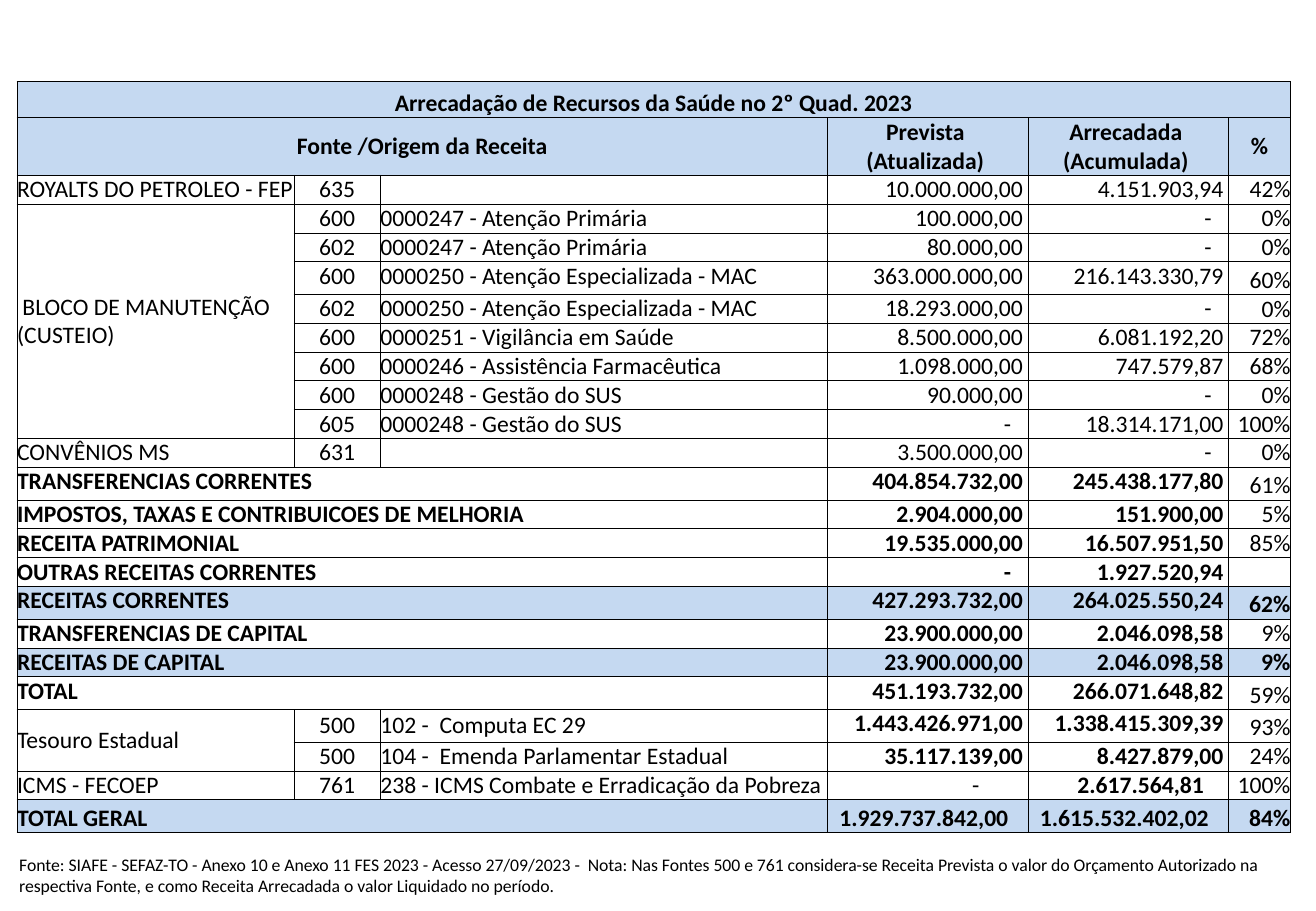
from lxml.etree import SubElement
from pptx import Presentation
from pptx.dml.color import RGBColor
from pptx.enum.text import MSO_ANCHOR, PP_ALIGN
from pptx.oxml.ns import qn
from pptx.util import Inches, Pt

BLACK = RGBColor(0x00, 0x00, 0x00)
WHITE = RGBColor(0xFF, 0xFF, 0xFF)
LIGHT_BLUE = RGBColor(0xC5, 0xD9, 0xF1)
FONT = "Calibri"
TOP, MIDDLE, BOTTOM = MSO_ANCHOR.TOP, MSO_ANCHOR.MIDDLE, MSO_ANCHOR.BOTTOM
LEFT, CENTER, RIGHT = PP_ALIGN.LEFT, PP_ALIGN.CENTER, PP_ALIGN.RIGHT

CUSTEIO = " BLOCO DE MANUTENÇÃO\n(CUSTEIO)"
TESOURO = "Tesouro Estadual"
FECOEP = "ICMS - FECOEP"
GERAL = "TOTAL GERAL"
SHADED = ("RECEITAS CORRENTES", "RECEITAS DE CAPITAL", GERAL)

receitas = [
    ("ROYALTS DO PETROLEO - FEP", "635", "", "10.000.000,00", "4.151.903,94", "42%"),
    (CUSTEIO, "600", "0000247 - Atenção Primária", "100.000,00", "-", "0%"),
    (CUSTEIO, "602", "0000247 - Atenção Primária", "80.000,00", "-", "0%"),
    (CUSTEIO, "600", "0000250 - Atenção Especializada - MAC", "363.000.000,00", "216.143.330,79", "60%"),
    (CUSTEIO, "602", "0000250 - Atenção Especializada - MAC", "18.293.000,00", "-", "0%"),
    (CUSTEIO, "600", "0000251 - Vigilância em Saúde", "8.500.000,00", "6.081.192,20", "72%"),
    (CUSTEIO, "600", "0000246 - Assistência Farmacêutica", "1.098.000,00", "747.579,87", "68%"),
    (CUSTEIO, "600", "0000248 - Gestão do SUS", "90.000,00", "-", "0%"),
    (CUSTEIO, "605", "0000248 - Gestão do SUS", "-", "18.314.171,00", "100%"),
    ("CONVÊNIOS MS", "631", "", "3.500.000,00", "-", "0%"),
    ("TRANSFERENCIAS CORRENTES", "", "", "404.854.732,00", "245.438.177,80", "61%"),
    ("IMPOSTOS, TAXAS E CONTRIBUICOES DE MELHORIA", "", "", "2.904.000,00", "151.900,00", "5%"),
    ("RECEITA PATRIMONIAL", "", "", "19.535.000,00", "16.507.951,50", "85%"),
    ("OUTRAS RECEITAS CORRENTES", "", "", "-", "1.927.520,94", ""),
    ("RECEITAS CORRENTES", "", "", "427.293.732,00", "264.025.550,24", "62%"),
    ("TRANSFERENCIAS DE CAPITAL", "", "", "23.900.000,00", "2.046.098,58", "9%"),
    ("RECEITAS DE CAPITAL", "", "", "23.900.000,00", "2.046.098,58", "9%"),
    ("TOTAL", "", "", "451.193.732,00", "266.071.648,82", "59%"),
    (TESOURO, "500", "102 -  Computa EC 29", "1.443.426.971,00", "1.338.415.309,39", "93%"),
    (TESOURO, "500", "104 -  Emenda Parlamentar Estadual", "35.117.139,00", "8.427.879,00", "24%"),
    (FECOEP, "761", "238 - ICMS Combate e Erradicação da Pobreza", "-", "2.617.564,81", "100%"),
    (GERAL, "", "", "1.929.737.842,00", "1.615.532.402,02", "84%"),
]
column_widths = [2.28, 0.71, 3.68, 1.65, 1.65, 0.51]
tall_rows = (5, 12, 16, 19, 20, 23)
row_heights = [0.3, 0.45] + [0.27 if i in tall_rows else 0.23 for i in range(2, 24)]


def add_text(paragraph, text, size, bold=False):
    run = paragraph.add_run()
    run.text = text
    run.font.name = FONT
    run.font.size = Pt(size)
    run.font.bold = bold
    run.font.color.rgb = BLACK


def write_cell(cell, text, align, anchor, bold=False, gap=0):
    cell.vertical_anchor = anchor
    cell.margin_right = Inches(gap)
    frame = cell.text_frame
    for i, line in enumerate(text.split("\n") if text else []):
        paragraph = frame.add_paragraph() if i else frame.paragraphs[0]
        paragraph.alignment = align
        add_text(paragraph, line, 14, bold)


prs = Presentation()
prs.slide_width, prs.slide_height = Inches(10.83), Inches(7.5)
slide = prs.slides.add_slide(prs.slide_layouts[6])

arrecadacao = slide.shapes.add_table(
    len(row_heights), len(column_widths),
    Inches(0.14), Inches(0.67), Inches(10.48), Inches(6.16),
).table
arrecadacao.first_row = arrecadacao.horz_banding = False
for column, width in zip(arrecadacao.columns, column_widths):
    column.width = Inches(width)
for row, height in zip(arrecadacao.rows, row_heights):
    row.height = Inches(height)

for r, row in enumerate(arrecadacao.rows):
    shaded = r < 2 or receitas[r - 2][0] in SHADED
    for cell in row.cells:
        cell.margin_left = cell.margin_right = cell.margin_top = cell.margin_bottom = 0
        cell.text_frame.paragraphs[0]._p.get_or_add_endParaRPr().set("sz", "1400")
        properties = cell._tc.get_or_add_tcPr()
        for side in ("a:lnL", "a:lnR", "a:lnT", "a:lnB"):
            border = SubElement(properties, qn(side), w=str(Pt(0.5)))
            border_fill = SubElement(border, qn("a:solidFill"))
            SubElement(border_fill, qn("a:srgbClr"), val=str(BLACK))
        cell.fill.solid()
        cell.fill.fore_color.rgb = LIGHT_BLUE if shaded else WHITE

arrecadacao.cell(0, 0).merge(arrecadacao.cell(0, 5))
write_cell(arrecadacao.cell(0, 0), "Arrecadação de Recursos da Saúde no 2º Quad. 2023", CENTER, BOTTOM, True)
arrecadacao.cell(1, 0).merge(arrecadacao.cell(1, 2))
for c, heading in [
    (0, "Fonte /Origem da Receita"),
    (3, "Prevista\n(Atualizada)"),
    (4, "Arrecadada\n(Acumulada)"),
    (5, "%"),
]:
    write_cell(arrecadacao.cell(1, c), heading, CENTER, MIDDLE, True, 0.04 if c in (3, 4) else 0)

arrecadacao.cell(3, 0).merge(arrecadacao.cell(10, 0))
arrecadacao.cell(20, 0).merge(arrecadacao.cell(21, 0))

previous_origin = None
for r, (origin, code, action, *amounts, percent) in enumerate(receitas, start=2):
    cells = [arrecadacao.cell(r, c) for c in range(6)]
    is_total = not code
    own_source = origin in (TESOURO, FECOEP)
    if is_total:
        cells[0].merge(cells[2])
        write_cell(cells[0], origin, LEFT, BOTTOM if origin == GERAL else TOP, True)
    else:
        if origin != previous_origin:
            write_cell(cells[0], origin, LEFT, MIDDLE)
        source_anchor = MIDDLE if own_source else TOP
        write_cell(cells[1], code, CENTER, source_anchor)
        write_cell(cells[2], action, LEFT, source_anchor)
    for cell, amount in zip(cells[3:5], amounts):
        gap = 0.14 if amount == "-" else 0.04
        if origin == FECOEP:
            gap = 0.4 if amount == "-" else 0.2
        elif origin == GERAL:
            gap = 0.16
        bold = is_total or (own_source and amount != "-")
        write_cell(cell, amount, RIGHT, BOTTOM if origin in (FECOEP, GERAL) else TOP, bold, gap)
    write_cell(cells[5], percent, RIGHT, BOTTOM, origin in SHADED)
    previous_origin = origin

source_note = slide.shapes.add_textbox(Inches(0.06), Inches(6.98), Inches(10.63), Inches(0.47)).text_frame
source_note.word_wrap = True
add_text(
    source_note.paragraphs[0],
    "Fonte: SIAFE - SEFAZ-TO - Anexo 10 e Anexo 11 FES 2023 - Acesso 27/09/2023 -  Nota: Nas Fontes 500 e 761 "
    "considera-se Receita Prevista o valor do Orçamento Autorizado na respectiva Fonte, e como Receita Arrecadada "
    "o valor Liquidado no período.",
    10.5,
)

prs.save("out.pptx")
